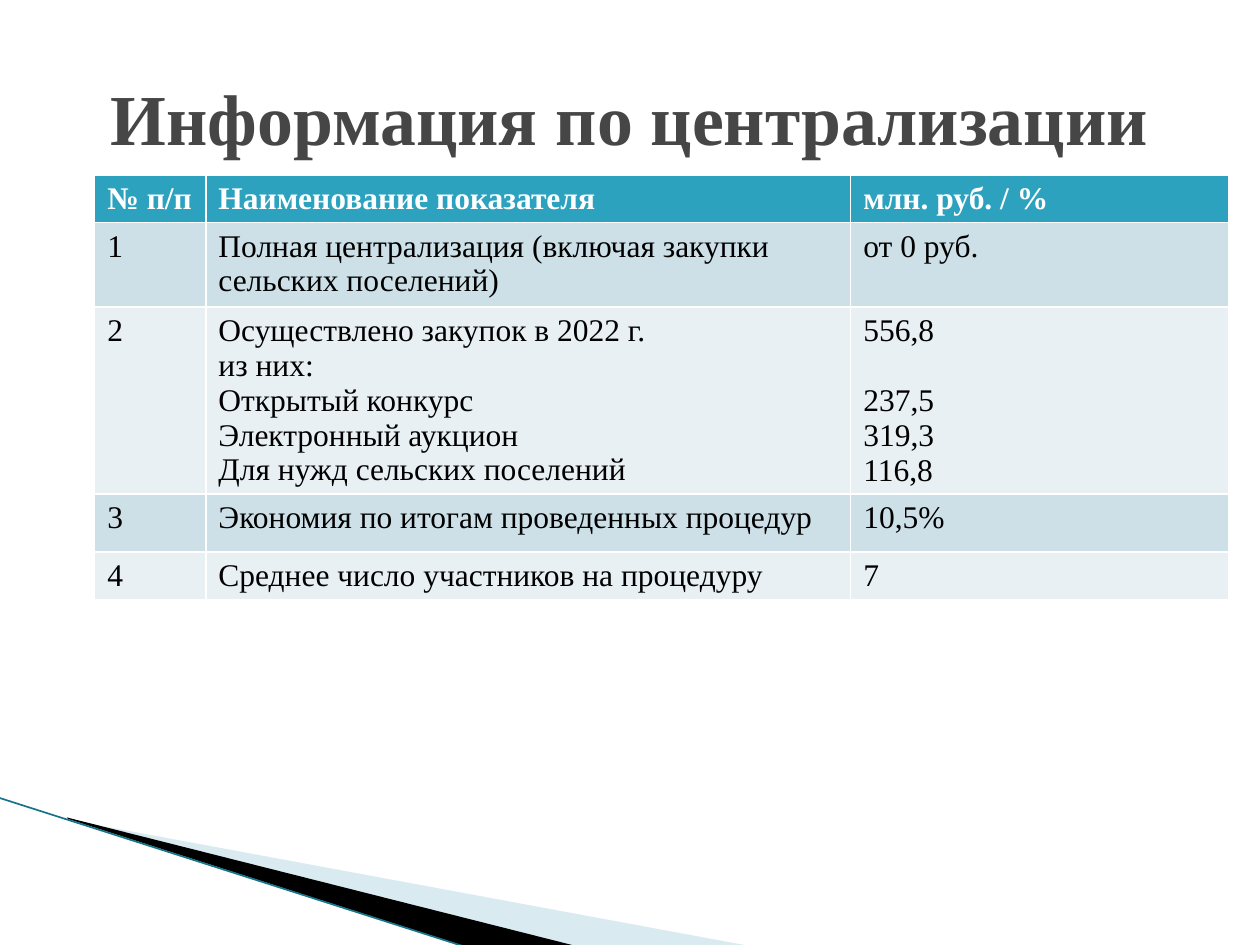
from lxml.etree import SubElement
from pptx import Presentation
from pptx.dml.color import RGBColor
from pptx.enum.shapes import MSO_CONNECTOR
from pptx.enum.text import MSO_ANCHOR, PP_ALIGN
from pptx.oxml.ns import qn
from pptx.util import Cm, Pt

FONT = "Times New Roman"
WHITE = RGBColor(0xFF, 0xFF, 0xFF)
BLACK = RGBColor(0, 0, 0)
GREY = RGBColor(0x46, 0x46, 0x46)
TEAL = RGBColor(0x2D, 0xA2, 0xBF)
DARK_TEAL = RGBColor(0x16, 0x74, 0x8A)
PALE_BLUE = RGBColor(0xA0, 0xCB, 0xDC)
BAND_DARK = RGBColor(0xCD, 0xE0, 0xE8)
BAND_LIGHT = RGBColor(0xE8, 0xF0, 0xF4)

prs = Presentation()
prs.slide_width, prs.slide_height = Cm(25.4), Cm(19.05)
s = prs.slides.add_slide(prs.slide_layouts[5])


def add_wedge(points, color):
    """Filled corner wedge through points given in centimetres."""
    points = [(Cm(x), Cm(y)) for x, y in points]
    builder = s.shapes.build_freeform(*points[0])
    builder.add_line_segments(points[1:], close=True)
    sp = builder.convert_to_shape()
    sp.shadow.inherit = False
    sp.fill.solid()
    sp.fill.fore_color.rgb = color
    sp.line.fill.background()
    return sp


# Corner decoration
light = add_wedge([(1.4, 16.53), (15.11, 19.07), (11.58, 19.07), (1.4, 16.51)], PALE_BLUE)
clr = light.fill._xPr.find(qn("a:solidFill"))[0]
SubElement(clr, qn("a:alpha"), val="40000")
add_wedge([(1.35, 16.48), (11.61, 19.07), (9.45, 19.1), (1.37, 16.51)], BLACK)
edge = s.shapes.add_connector(MSO_CONNECTOR.STRAIGHT, Cm(-0.03), Cm(16.08), Cm(9.42), Cm(19.1))
edge.line.color.rgb = DARK_TEAL
edge.line.width = Pt(0.95)
SubElement(edge._element.spPr, qn("a:effectLst"))

# Title
title = s.shapes.title
title.left, title.top, title.width, title.height = Cm(1.27), Cm(0.76), Cm(22.86), Cm(3.18)
tf = title.text_frame
tf.text = "Информация по централизации"
tf.vertical_anchor = MSO_ANCHOR.MIDDLE
p = tf.paragraphs[0]
p.alignment = PP_ALIGN.CENTER
font = p.runs[0].font
font.name, font.size, font.bold = FONT, Pt(41), True
font.color.rgb = GREY

# Table
rows = [
    ("№ п/п", "Наименование показателя", "млн. руб. / %"),
    ("1", "Полная централизация (включая закупки сельских поселений)", "от 0 руб."),
    ("2",
     "Осуществлено закупок в 2022 г.\nиз них:\nОткрытый конкурс\n"
     "Электронный аукцион\nДля нужд сельских поселений",
     "556,8\n237,5\n319,3\n116,8"),
    ("3", "Экономия по итогам проведенных процедур", "10,5%"),
    ("4", "Среднее число участников на процедуру", "7"),
]
col_widths = [2.24, 13, 7.62]
row_heights = [0.86, 1.7, 3.43, 1.17, 0.86]
table = s.shapes.add_table(len(rows), len(col_widths), Cm(1.91), Cm(3.53),
                           Cm(sum(col_widths)), Cm(sum(row_heights))).table
for column, width in zip(table.columns, col_widths):
    column.width = Cm(width)
for i, (row, height) in enumerate(zip(rows, row_heights)):
    table.rows[i].height = Cm(height)
    header = i == 0
    fill = TEAL if header else BAND_DARK if i % 2 else BAND_LIGHT
    for j, text in enumerate(row):
        cell = table.cell(i, j)
        cell.fill.solid()
        cell.fill.fore_color.rgb = fill
        cell.text_frame.text = text
        for p in cell.text_frame.paragraphs:
            font = p.runs[0].font
            font.name, font.size, font.bold = FONT, Pt(18), header
            font.color.rgb = WHITE if header else BLACK

# The amounts skip the line that holds "из них:"
table.cell(2, 2).text_frame.paragraphs[1].space_before = Pt(20)

prs.save("out.pptx")
